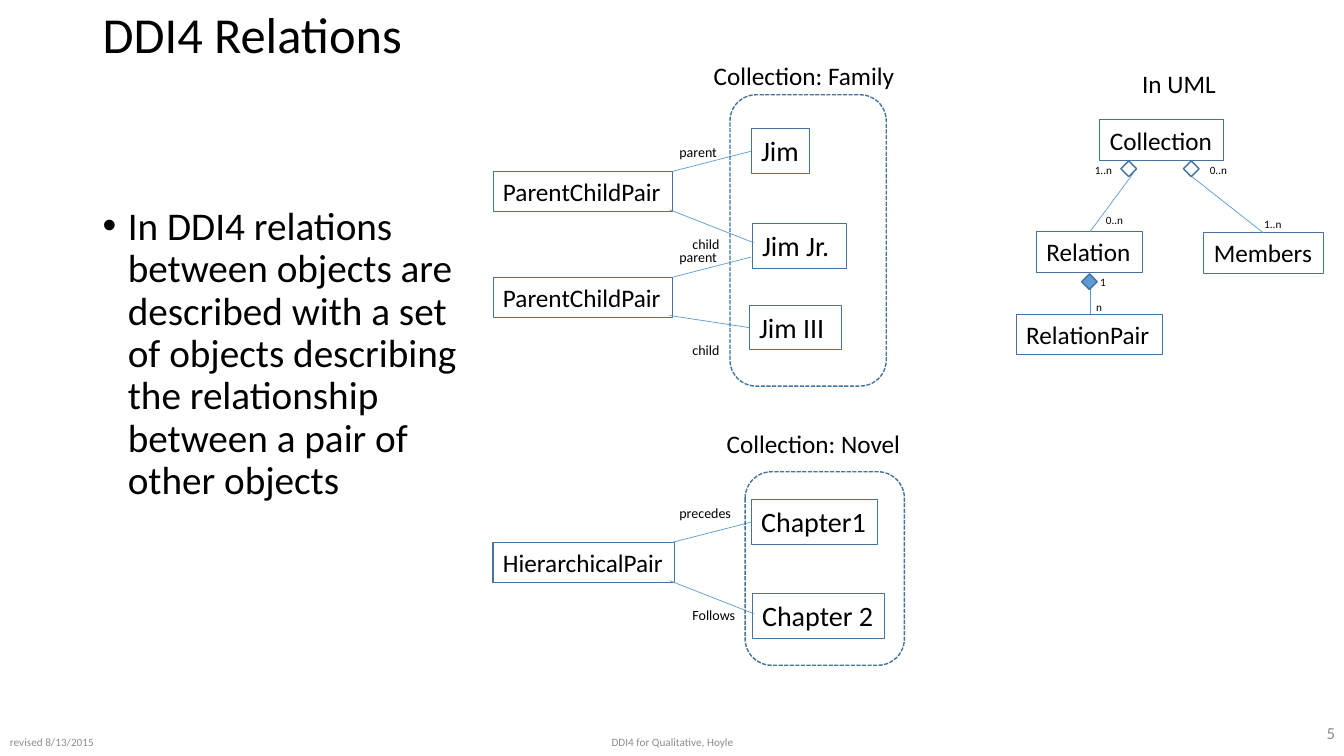
from dataclasses import dataclass

from lxml.etree import SubElement
from pptx import Presentation
from pptx.dml.color import RGBColor as Color
from pptx.enum.dml import MSO_LINE_DASH_STYLE as Dash
from pptx.enum.shapes import MSO_CONNECTOR_TYPE as Connector
from pptx.enum.shapes import MSO_SHAPE as Preset
from pptx.enum.text import MSO_ANCHOR as Anchor
from pptx.enum.text import PP_ALIGN as Align
from pptx.oxml.ns import qn
from pptx.util import Inches, Pt


@dataclass
class Theme:
    font = "Calibri"
    ink = Color.from_string("000000")
    muted = Color.from_string("8C8C8C")
    outline = Color.from_string("43739E")
    accent = Color.from_string("5B9BD5")
    title = 36
    body = 28
    member = 20
    node = 18
    number = 12
    role = 10
    small = 8


CELL = Inches(0.01)
COLUMNS, ROWS = 1333, 750

presentation = Presentation()
presentation.slide_width = COLUMNS * CELL
presentation.slide_height = ROWS * CELL
slide = presentation.slides.add_slide(presentation.slide_layouts[6])


def add_text(text, column, row, width, height, size, color=Theme.ink, align=Align.LEFT,
             anchor=Anchor.TOP, wrap=False, boxed=False):
    area = [cells * CELL for cells in (column, row, width, height)]
    if boxed:
        shape = slide.shapes.add_shape(Preset.RECTANGLE, *area)
        shape.shadow.inherit = False
        shape.fill.background()
        shape.line.color.rgb = Theme.outline
        shape.line.width = Pt(0.75)
    else:
        shape = slide.shapes.add_textbox(*area)
    frame = shape.text_frame
    frame.text = text
    frame.word_wrap = wrap
    frame.vertical_anchor = anchor
    paragraph = frame.paragraphs[0]
    paragraph.alignment = align
    font = paragraph.runs[0].font
    font.name = Theme.font
    font.size = Pt(size)
    font.color.rgb = color
    return paragraph


def add_line(*ends):
    line = slide.shapes.add_connector(Connector.STRAIGHT, *[cells * CELL for cells in ends])
    line.line.color.rgb = Theme.accent
    line.line.width = Pt(0.5)
    SubElement(line._element.spPr, qn("a:effectLst"))


title = add_text("DDI4 Relations", 92, 0, 1150, 73, Theme.title, anchor=Anchor.MIDDLE, wrap=True)
title.line_spacing = 0.9

body = add_text(
    "In DDI4 relations between objects are described with a set of objects "
    "describing the relationship between a pair of other objects",
    92, 200, 386, 476, Theme.body, wrap=True)
body.line_spacing = 0.9
body.space_before = Pt(10)
properties = body._p.get_or_add_pPr()
properties.set("marL", str(Inches(0.25)))
properties.set("indent", str(-Inches(0.25)))
SubElement(properties, qn("a:buFont"), typeface="Arial")
SubElement(properties, qn("a:buChar"), char="•")

for text, column, row, width, height, size, align in [
    ("revised 8/13/2015", 0, 723, 108, 26, Theme.small, Align.LEFT),
    ("DDI4 for Qualitative, Hoyle", 442, 723, 450, 26, Theme.small, Align.CENTER),
    ("5", 1242, 711, 92, 32, Theme.number, Align.RIGHT),
]:
    add_text(text, column, row, width, height, size, Theme.muted, align, Anchor.MIDDLE, True)

for text, column, row, width in [
    ("Collection: Family", 698, 55, 201),
    ("Collection: Novel", 711, 420, 194),
    ("In UML", 1123, 63, 94),
]:
    add_text(text, column, row, width, 40, Theme.node)

for text, column, row, width in [
    ("Jim", 745, 128, 58),
    ("Jim Jr.", 746, 222, 94),
    ("Jim III", 743, 303, 92),
    ("Chapter1", 745, 496, 125),
    ("Chapter 2", 746, 589, 131),
]:
    add_text(text, column, row, width, 44, Theme.member, boxed=True)

for text, row, width, first_role, rise, second_role, end_column, drop in [
    ("ParentChildPair", 170, 178, "parent", 33, "child", 748, 71),
    ("ParentChildPair", 275, 178, "parent", 33, "child", 743, 50),
    ("HierarchicalPair", 538, 180, "precedes", 42, "Follows", 748, 71),
]:
    add_text(text, 489, row, width, 40, Theme.node, boxed=True)
    add_line(667, row, 745, row - 20)
    add_line(664, row + 38, end_column, row + drop)
    first_width, second_width = (72, 63) if first_role == "precedes" else (58, 47)
    add_text(first_role, 664, row - rise, first_width, 27, Theme.role)
    add_text(second_role, 677, row + 59, second_width, 27, Theme.role)

for text, column, row, width in [
    ("Collection", 1091, 119, 123),
    ("Relation", 1028, 230, 105),
    ("Members", 1194, 231, 119),
    ("RelationPair", 1008, 312, 145),
]:
    add_text(text, column, row, width, 40, Theme.node, boxed=True)

for ends in [(1124, 172, 1081, 230), (1178, 172, 1253, 231), (1081, 286, 1081, 312)]:
    add_line(*ends)

for column, row, filled in [(1114, 162, False), (1176, 162, False), (1075, 274, True)]:
    diamond = slide.shapes.add_shape(
        Preset.RECTANGLE, column * CELL, row * CELL, 11 * CELL, 11 * CELL)
    diamond.rotation = 45
    diamond.shadow.inherit = False
    diamond.line.color.rgb = Theme.outline
    diamond.line.width = Pt(1)
    if filled:
        diamond.fill.solid()
        diamond.fill.fore_color.rgb = Theme.accent
    else:
        diamond.fill.background()

for text, column, row, width in [
    ("1..n", 1076, 157, 38),
    ("0..n", 1190, 157, 38),
    ("0..n", 1087, 207, 38),
    ("1..n", 1244, 211, 38),
    ("1", 1085, 268, 16),
    ("n", 1081, 293, 16),
]:
    add_text(text, column, row, width, 24, Theme.small)

for area in [(724, 94, 155, 289), (739, 468, 158, 192)]:
    collection = slide.shapes.add_shape(
        Preset.ROUNDED_RECTANGLE, *[cells * CELL for cells in area])
    collection.shadow.inherit = False
    collection.fill.background()
    collection.line.color.rgb = Theme.outline
    collection.line.width = Pt(1)
    collection.line.dash_style = Dash.SQUARE_DOT

presentation.save("out.pptx")
